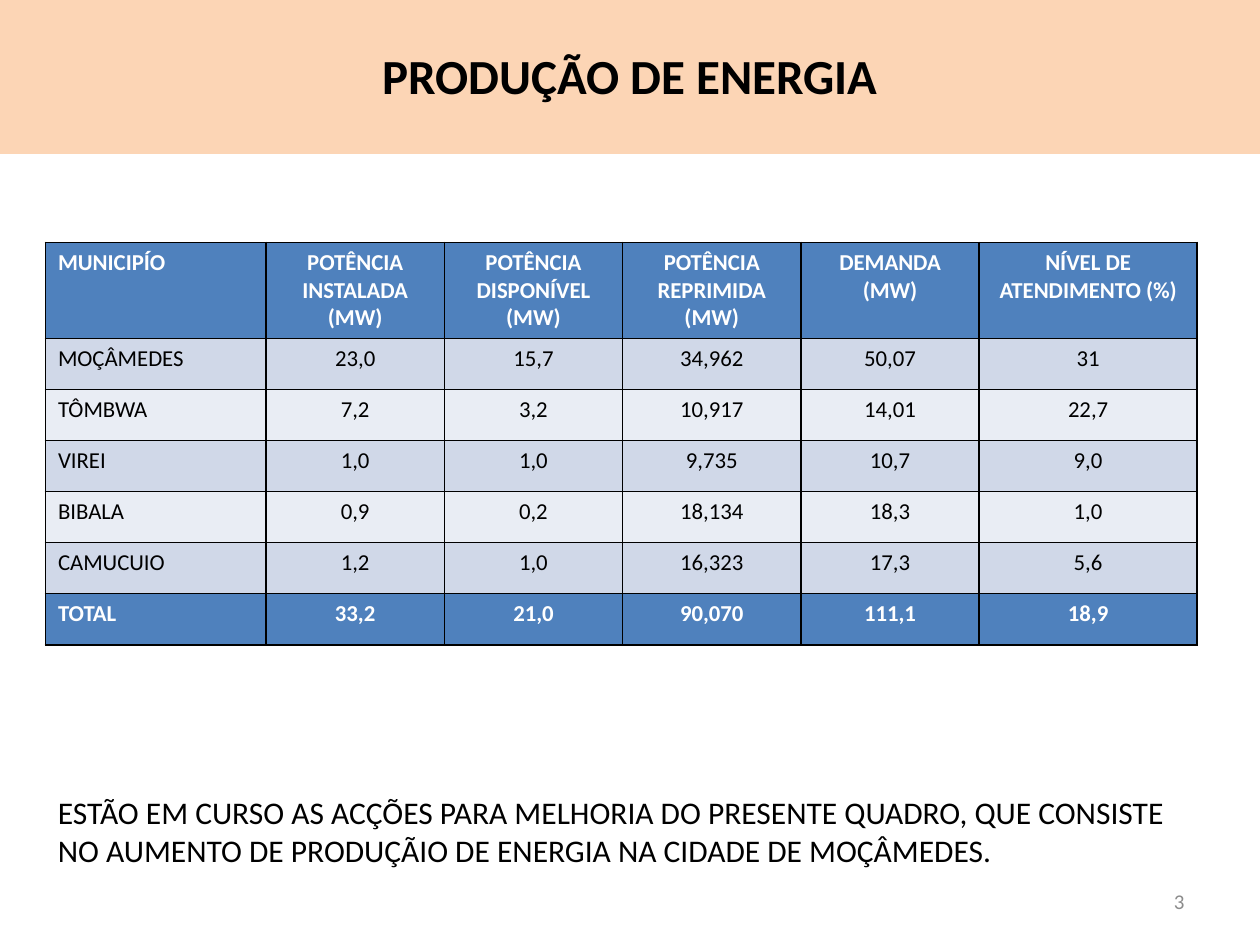
from lxml.etree import SubElement
from pptx import Presentation
from pptx.dml.color import RGBColor
from pptx.enum.shapes import MSO_SHAPE
from pptx.enum.text import MSO_ANCHOR, PP_ALIGN
from pptx.oxml.ns import qn
from pptx.util import Pt

BLACK = RGBColor(0, 0, 0)
WHITE = RGBColor(255, 255, 255)
GRAY = RGBColor(0x8C, 0x8C, 0x8C)
PEACH = RGBColor(0xFC, 0xD5, 0xB5)
BLUE = RGBColor(0x4F, 0x81, 0xBD)
BANDS = RGBColor(0xD0, 0xD8, 0xE8), RGBColor(0xE9, 0xED, 0xF4)

WIDTHS = 126, 101.9, 101.9, 101.9, 101.9, 124.5
HEADS = (
    "MUNICIPÍO",
    "POTÊNCIA INSTALADA (MW)",
    "POTÊNCIA DISPONÍVEL (MW)",
    "POTÊNCIA REPRIMIDA (MW)",
    "DEMANDA (MW)",
    "NÍVEL DE ATENDIMENTO (%)",
)
TOWNS = [
    ("MOÇÂMEDES", "23,0", "15,7", "34,962", "50,07", "31"),
    ("TÔMBWA", "7,2", "3,2", "10,917", "14,01", "22,7"),
    ("VIREI", "1,0", "1,0", "9,735", "10,7", "9,0"),
    ("BIBALA", "0,9", "0,2", "18,134", "18,3", "1,0"),
    ("CAMUCUIO", "1,2", "1,0", "16,323", "17,3", "5,6"),
]
TOTAL = ("TOTAL", "33,2", "21,0", "90,070", "111,1", "18,9")
NOTE = (
    "ESTÃO EM CURSO AS ACÇÕES PARA MELHORIA DO PRESENTE QUADRO, QUE CONSISTE\n"
    "NO AUMENTO DE PRODUÇÃIO DE ENERGIA NA CIDADE DE MOÇÂMEDES."
)


class Deck:
    """Holds the text style and the current slide."""

    font = "Calibri"

    def __init__(self, slide):
        self.slide = slide

    def style(self, frame, text, size, color=BLACK, bold=False, align=PP_ALIGN.LEFT):
        frame.text = text
        frame.word_wrap = True
        for para in frame.paragraphs:
            para.alignment = align
            for run in para.runs:
                run.font.name = self.font
                run.font.size = Pt(size)
                run.font.bold = bold
                run.font.color.rgb = color

    def band(self, text, x, y, w, h):
        shape = self.slide.shapes.add_shape(
            MSO_SHAPE.RECTANGLE, Pt(x), Pt(y), Pt(w), Pt(h))
        shape.shadow.inherit = False
        shape.fill.solid()
        shape.fill.fore_color.rgb = PEACH
        shape.line.fill.background()
        frame = shape.text_frame
        frame.vertical_anchor = MSO_ANCHOR.MIDDLE
        self.style(frame, text, 28, bold=True, align=PP_ALIGN.CENTER)

    def text(self, text, x, y, w, h, size, anchor=MSO_ANCHOR.TOP, **look):
        frame = self.slide.shapes.add_textbox(Pt(x), Pt(y), Pt(w), Pt(h)).text_frame
        frame.vertical_anchor = anchor
        self.style(frame, text, size, **look)

    def border(self, cell):
        props = cell._tc.get_or_add_tcPr()
        for side in "LRTB":
            line = SubElement(props, qn(f"a:ln{side}"), w=str(Pt(1)))
            fill = SubElement(line, qn("a:solidFill"))
            SubElement(fill, qn("a:srgbClr"), val=str(BLACK))

    def table(self, rows, x, y, widths, top, step):
        last = len(rows) - 1
        table = self.slide.shapes.add_table(
            len(rows), len(widths), Pt(x), Pt(y),
            Pt(sum(widths)), Pt(top + step * last)).table
        for col, width in zip(table.columns, widths):
            col.width = Pt(width)
        for i, row in enumerate(rows):
            strong = i in (0, last)
            table.rows[i].height = Pt(step if i else top)
            for j, text in enumerate(row):
                cell = table.cell(i, j)
                self.border(cell)
                cell.fill.solid()
                cell.fill.fore_color.rgb = BLUE if strong else BANDS[(i - 1) % 2]
                self.style(cell.text_frame, text, 13, WHITE if strong else BLACK,
                           strong, PP_ALIGN.CENTER if j else PP_ALIGN.LEFT)


def main():
    deck = Presentation()
    deck.slide_width, deck.slide_height = Pt(720), Pt(540)
    page = Deck(deck.slides.add_slide(deck.slide_layouts[6]))
    page.band("PRODUÇÃO DE ENERGIA", 0, -2, 720, 90)
    page.table([HEADS, *TOWNS, TOTAL], 26, 138.5, WIDTHS, 54.8, 29.2)
    page.text("3", 516, 500.5, 168, 28.8, 12, MSO_ANCHOR.MIDDLE,
              color=GRAY, align=PP_ALIGN.RIGHT)
    page.text(NOTE, 26, 449.5, 658, 51, 18)
    deck.save("out.pptx")


if __name__ == "__main__":
    main()
